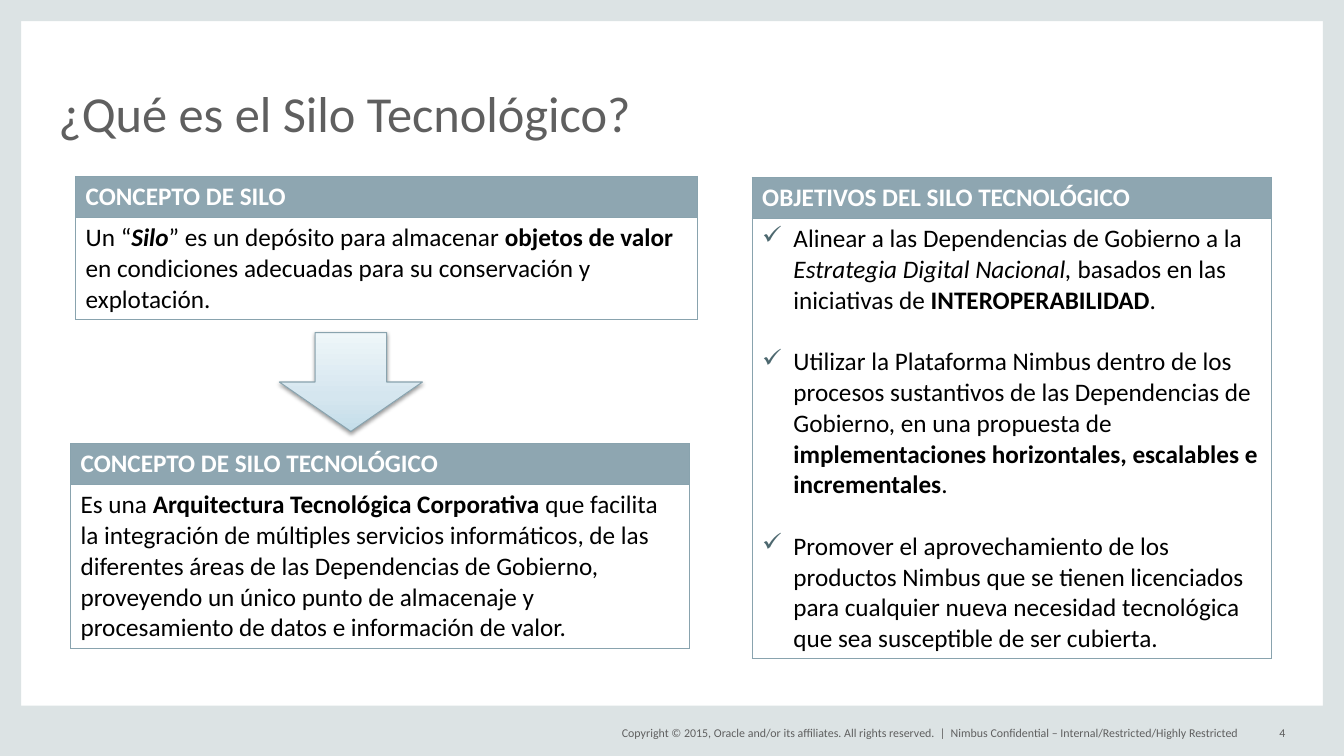
from lxml import etree
from pptx import Presentation
from pptx.dml.color import RGBColor
from pptx.enum import shapes, text
from pptx.oxml import parse_xml
from pptx.oxml.ns import qn
from pptx.util import Inches, Pt

NS = 'xmlns:a="http://schemas.openxmlformats.org/drawingml/2006/main"'
FONT = "Calibri"
GRAY = RGBColor(0x5F, 0x5F, 0x5F)
FRAME = RGBColor(0xDC, 0xE3, 0xE4)
STEEL = RGBColor(0x8E, 0xA6, 0xB1)
EDGE = RGBColor(0x89, 0xA3, 0xAE)
CHECK = RGBColor(0x4D, 0x68, 0x6F)
WHITE = RGBColor(0xFF, 0xFF, 0xFF)
BLACK = RGBColor(0, 0, 0)

# Content: each run is (text, style), with b for bold and i for italic
TITLE = "¿Qué es el Silo Tecnológico?"
SILO = [[("Un “", ""), ("Silo", "bi"), ("” es un depósito para almacenar ", ""),
         ("objetos de valor ", "b"),
         ("en condiciones adecuadas para su conservación y explotación.", "")]]
TECH = [[("Es una ", ""), ("Arquitectura Tecnológica Corporativa ", "b"),
         ("que facilita la integración de múltiples servicios informáticos, de las "
          "diferentes áreas de las Dependencias de Gobierno, proveyendo un único punto "
          "de almacenaje y procesamiento de datos e información de valor.", "")]]
GOALS = [
    [("Alinear a las Dependencias de Gobierno a la ", ""),
     ("Estrategia Digital Nacional, ", "i"), ("basados en las iniciativas de ", ""),
     ("INTEROPERABILIDAD", "b"), (".", "")],
    [("Utilizar la Plataforma Nimbus dentro de los procesos sustantivos de las "
      "Dependencias de Gobierno, en una propuesta de ", ""),
     ("implementaciones horizontales, escalables e incrementales", "b"), (".", "")],
    [("Promover el aprovechamiento de los productos Nimbus que se tienen licenciados "
      "para cualquier nueva necesidad tecnológica que sea susceptible de ser cubierta.",
      "")],
]
# Heading, paragraphs, left, top, width, body height, checked list
HEAD = 0.41
PANELS = [
    ("CONCEPTO DE SILO", SILO, 0.75, 1.75, 6.17, 1.01, False),
    ("CONCEPTO DE SILO TECNOLÓGICO", TECH, 0.7, 4.4, 6.14, 1.62, False),
    ("OBJETIVOS DEL SILO TECNOLÓGICO", GOALS, 7.46, 1.76, 5.15, 4.36, True),
]
# Text, left, width, alignment
LEFT, RIGHT = text.PP_ALIGN.LEFT, text.PP_ALIGN.RIGHT
FOOT = [
    ("Copyright © 2015, Oracle and/or its affiliates. All rights reserved.  |",
     5.88, 3.5, RIGHT),
    ("Nimbus Confidential – Internal/Restricted/Highly Restricted", 9.43, 3, LEFT),
    ("4", 12.33, 0.42, RIGHT),
]
WIDE, HIGH, RIM, BASE = 13.33, 7.5, 0.21, 0.5
BARS = [(0, 0, RIM, HIGH), (WIDE - RIM, 0, RIM, HIGH),
        (0, HIGH - BASE, WIDE, BASE), (0, 0, WIDE, RIM)]


def box(*sides):
    return [Inches(side) for side in sides]


def style(para, size, color):
    para.font.name = FONT
    para.font.size = Pt(size)
    para.font.color.rgb = color


def trim(frame):
    frame.margin_left = frame.margin_top = frame.margin_right = frame.margin_bottom = 0


def check(para):
    props = para._p.get_or_add_pPr()
    props.set("marL", str(Inches(0.31)))
    props.set("indent", str(-Inches(0.31)))
    color = etree.SubElement(props, qn("a:buClr"))
    etree.SubElement(color, qn("a:srgbClr"), val=str(CHECK))
    etree.SubElement(props, qn("a:buChar"), char="✓")


def paint(cell, color):
    props = cell._tc.get_or_add_tcPr()
    for side in "LRTB":
        props.append(parse_xml(
            f'<a:ln{side} {NS} w="{Pt(0.75)}"><a:solidFill><a:srgbClr val="{EDGE}"/>'
            f'</a:solidFill></a:ln{side}>'))
    cell.fill.solid()
    cell.fill.fore_color.rgb = color


def panel(slide, name, paras, left, top, width, tall, listed):
    table = slide.shapes.add_table(2, 1, *box(left, top, width, HEAD + tall)).table
    table.horz_banding = False
    table.rows[0].height, table.rows[1].height = box(HEAD, tall)
    head, body = table.cell(0, 0), table.cell(1, 0)
    paint(head, STEEL)
    paint(body, WHITE)
    head.text = name
    title = head.text_frame.paragraphs[0]
    style(title, 18, WHITE)
    title.font.bold = True
    frame = body.text_frame
    for n, runs in enumerate(paras):
        para = frame.add_paragraph() if n else frame.paragraphs[0]
        if n:
            para.space_before = Pt(22)
        if listed:
            check(para)
        style(para, 18, BLACK)
        for words, marks in runs:
            run = para.add_run()
            run.text = words
            run.font.bold = "b" in marks
            run.font.italic = "i" in marks


def arrow(slide):
    shape = slide.shapes.add_shape(shapes.MSO_SHAPE.DOWN_ARROW,
                                   *box(2.77, 3.3, 1.42, 0.98))
    shape.line.color.rgb = EDGE
    shape.line.width = Pt(0.75)
    # Three-stop gradient and soft shadow
    stops = "".join(f'<a:gs pos="{pos}000"><a:srgbClr val="{color}"/></a:gs>'
                    for pos, color in [(0, "C4DDE9"), (35, "D5E6EF"), (100, "EEF6F9")])
    props = shape._element.spPr
    props.find(qn("a:prstGeom")).addnext(parse_xml(
        f'<a:gradFill {NS} rotWithShape="1"><a:gsLst>{stops}</a:gsLst>'
        f'<a:lin ang="16200000" scaled="0"/></a:gradFill>'))
    props.append(parse_xml(
        f'<a:effectLst {NS}><a:outerShdw blurRad="{Pt(3.1)}" dist="{Pt(1.6)}" '
        f'dir="5400000" rotWithShape="0"><a:srgbClr val="000000">'
        f'<a:alpha val="38000"/></a:srgbClr></a:outerShdw></a:effectLst>'))


def main():
    deck = Presentation()
    deck.slide_width, deck.slide_height = box(WIDE, HIGH)
    slide = deck.slides.add_slide(deck.slide_layouts[5])

    # Frame
    for bar in BARS:
        shape = slide.shapes.add_shape(shapes.MSO_SHAPE.RECTANGLE, *box(*bar))
        shape.shadow.inherit = False
        shape.fill.solid()
        shape.fill.fore_color.rgb = FRAME
        shape.line.fill.background()

    # Title
    title = slide.shapes.title
    title.left, title.top, title.width, title.height = box(0.58, 0.44, 12.17, 0.97)
    frame = title.text_frame
    frame.text = TITLE
    trim(frame)
    frame.auto_size = text.MSO_AUTO_SIZE.NONE
    frame.vertical_anchor = text.MSO_ANCHOR.BOTTOM
    para = frame.paragraphs[0]
    para.alignment = LEFT
    para.line_spacing = 0.8
    style(para, 36, GRAY)

    # Footer
    for words, left, width, align in FOOT:
        frame = slide.shapes.add_textbox(*box(left, 7.17, width, 0.2)).text_frame
        frame.text = words
        trim(frame)
        frame.word_wrap = False
        frame.vertical_anchor = text.MSO_ANCHOR.MIDDLE
        frame.paragraphs[0].alignment = align
        style(frame.paragraphs[0], 8.5, GRAY)

    # Arrow and panels
    arrow(slide)
    for item in PANELS:
        panel(slide, *item)

    deck.save("out.pptx")


if __name__ == "__main__":
    main()
